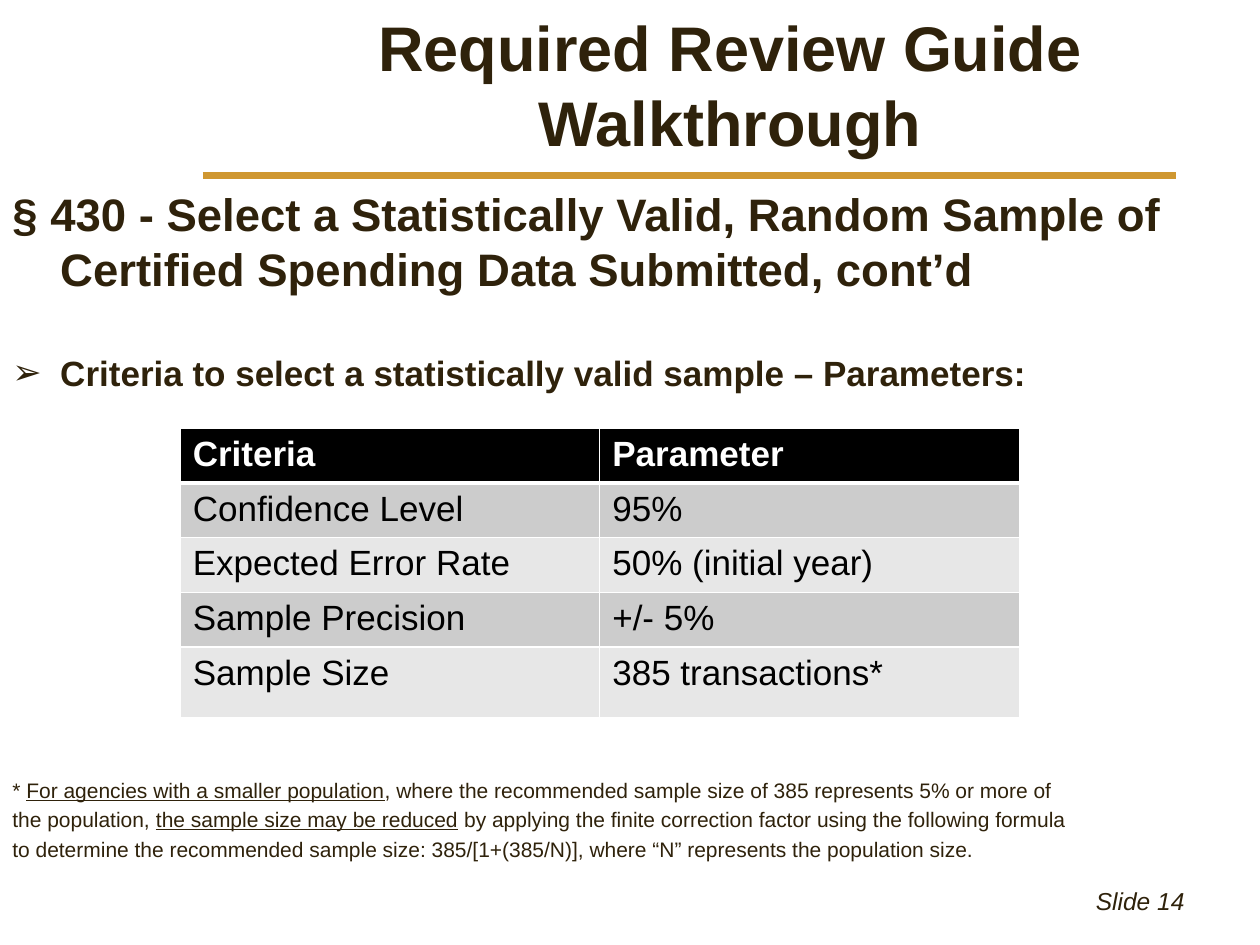
from dataclasses import dataclass

import pptx
import pptx.dml.color
import pptx.enum.shapes
import pptx.enum.text
import pptx.oxml
import pptx.oxml.ns
import pptx.util
from pptx.util import Inches

COLORS = {
    "text": "2F220B", "rule": "CF9731", "white": "FFFFFF", "black": "000000",
    "dark_band": "CCCCCC", "light_band": "E7E7E7",
}
ALIGN = pptx.enum.text.PP_ALIGN
ANCHOR = pptx.enum.text.MSO_ANCHOR


@dataclass
class Span:
    text: str
    underline: bool = False


@dataclass
class Para:
    spans: list[Span]
    size: float
    bold: bool = False
    italic: bool = False
    color: str = "text"
    align: ALIGN = ALIGN.LEFT
    space_before: float = 0
    hanging: float = 0
    bullet: str = ""


@dataclass
class Box:
    left: float
    top: float
    width: float
    height: float
    paras: list[Para]
    anchor: ANCHOR = ANCHOR.TOP


def rgb(name: str) -> pptx.dml.color.RGBColor:
    return pptx.dml.color.RGBColor.from_string(COLORS[name])


def append_xml(parent, tag: str, **attributes: str):
    element = pptx.oxml.parse_xml(f"<{tag} {pptx.oxml.ns.nsdecls('a')}/>")
    for name, value in attributes.items():
        element.set(name, value)
    parent.append(element)
    return element


def write_para(paragraph, para: Para) -> None:
    properties = paragraph._p.get_or_add_pPr()
    if para.hanging:
        properties.set("marL", str(Inches(para.hanging)))
        properties.set("indent", str(-Inches(para.hanging)))
    if para.bullet:
        append_xml(properties, "a:buFont", typeface="Arial")
        append_xml(properties, "a:buChar", char=para.bullet)
    paragraph.alignment = para.align
    paragraph.space_before = pptx.util.Pt(para.space_before)
    for span in para.spans:
        run = paragraph.add_run()
        run.text = span.text
        formats = {
            "name": "Arial", "size": pptx.util.Pt(para.size), "bold": para.bold,
            "italic": para.italic, "underline": span.underline,
        }
        for name, value in formats.items():
            setattr(run.font, name, value)
        run.font.color.rgb = rgb(para.color)


def draw_box(page, box: Box) -> None:
    shape = page.shapes.add_textbox(
        *map(Inches, (box.left, box.top, box.width, box.height)))
    frame = shape.text_frame
    frame.word_wrap = True
    frame.vertical_anchor = box.anchor
    for index, para in enumerate(box.paras):
        paragraph = frame.add_paragraph() if index else frame.paragraphs[0]
        write_para(paragraph, para)


def draw_rule(page, left: float, right: float, y: float) -> None:
    rule = page.shapes.add_connector(
        pptx.enum.shapes.MSO_CONNECTOR.STRAIGHT,
        Inches(left), Inches(y), Inches(right), Inches(y))
    rule.line.color.rgb = rgb("rule")
    rule.line.width = pptx.util.Pt(4)
    append_xml(rule._element.spPr, "a:effectLst")


def draw_borders(cell, widths: dict[str, float]) -> None:
    properties = cell._tc.get_or_add_tcPr()
    for index, (side, width) in enumerate(widths.items()):
        line = append_xml(properties, f"a:{side}", w=str(pptx.util.Pt(width)))
        fill = append_xml(line, "a:solidFill")
        append_xml(fill, "a:srgbClr", val=COLORS["white"])
        properties.insert(index, line)  # borders come before the fill


def draw_table(page, rows: list[tuple[str, str]], heights: list[float]) -> None:
    column_width = 3.33
    table = page.shapes.add_table(
        len(rows), 2, Inches(1.43), Inches(3.4),
        Inches(2 * column_width), Inches(sum(heights))).table
    for column in table.columns:
        column.width = Inches(column_width)
    for index, (texts, height) in enumerate(zip(rows, heights)):
        table.rows[index].height = Inches(height)
        header = index == 0
        band = "black" if header else ("light_band", "dark_band")[index % 2]
        for column, text in enumerate(texts):
            cell = table.cell(index, column)
            cell.fill.solid()
            cell.fill.fore_color.rgb = rgb(band)
            draw_borders(cell, {"lnL": 1, "lnR": 1, "lnT": 3 if index == 1 else 1,
                                "lnB": 3 if header else 1})
            write_para(cell.text_frame.paragraphs[0], Para(
                [Span(text)], 20, bold=header, color="white" if header else "black"))


TITLE = Box(2.09, 0.26, 7.41, 0.81, [
    Para([Span("Required Review Guide Walkthrough")], 36, bold=True, align=ALIGN.CENTER),
], ANCHOR.MIDDLE)

BODY = Box(0, 1.43, 10, 1.9, [
    Para([Span("§ 430 - Select a Statistically Valid, Random Sample of "
               "Certified Spending Data Submitted, cont’d")], 26, bold=True, hanging=0.38),
    Para([Span("Criteria to select a statistically valid sample – Parameters:")],
         20, bold=True, space_before=32, hanging=0.38, bullet="➢"),
])

FOOTNOTE_LINES = [
    [Span("* "), Span("For agencies with a smaller population", True),
     Span(", where the recommended sample size of 385 represents 5% or more of")],
    [Span("the population, "), Span("the sample size may be reduced", True),
     Span(" by applying the finite correction factor using the following formula")],
    [Span("to determine the recommended sample size: 385/[1+(385/N)], "
          "where “N” represents the population size.")],
]
FOOTNOTE = Box(0, 6.12, 10, 0.8, [
    Para(spans, 12, space_before=2.4 if index else 0, hanging=0.38)
    for index, spans in enumerate(FOOTNOTE_LINES)
])

SLIDE_NUMBER = Box(7.17, 6.98, 2.33, 0.52, [
    Para([Span("Slide 14")], 14, italic=True, align=ALIGN.RIGHT),
])

PARAMETERS = [
    ("Criteria", "Parameter"),
    ("Confidence Level", "95%"),
    ("Expected Error Rate", "50% (initial year)"),
    ("Sample Precision", "+/- 5%"),
    ("Sample Size", "385 transactions*"),
]


def main() -> None:
    deck = pptx.Presentation()
    deck.slide_width, deck.slide_height = Inches(10), Inches(7.5)
    page = deck.slides.add_slide(deck.slide_layouts[6])

    # Title and the rule below it
    draw_rule(page, 1.61, 9.33, 1.39)
    draw_box(page, TITLE)

    # Section text, footnote and slide number
    for box in (BODY, FOOTNOTE, SLIDE_NUMBER):
        draw_box(page, box)

    # Sampling parameters
    draw_table(page, PARAMETERS, [0.41] * 4 + [0.56])
    deck.save("out.pptx")


if __name__ == "__main__":
    main()
